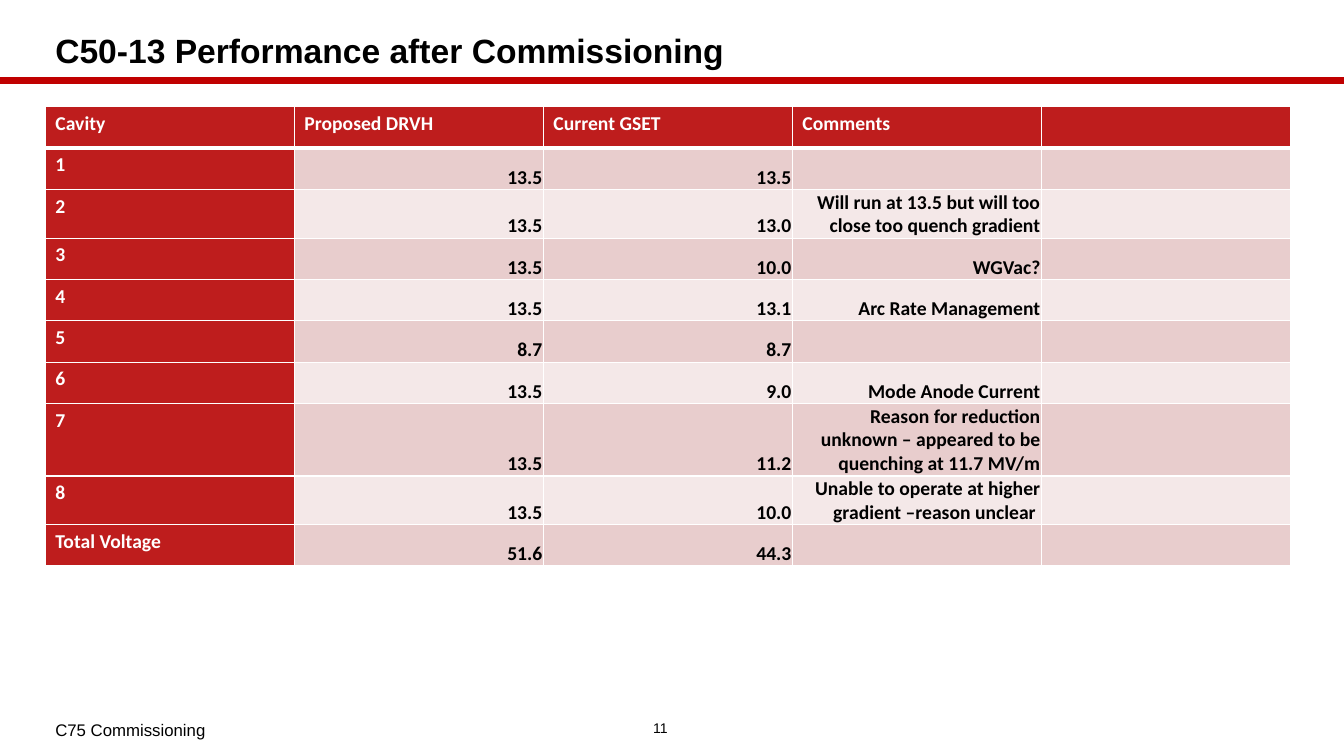
from dataclasses import dataclass

from lxml.etree import SubElement
from pptx import Presentation
from pptx.dml.color import RGBColor
from pptx.enum.shapes import MSO_CONNECTOR as Connector
from pptx.enum.text import MSO_ANCHOR as Anchor, PP_ALIGN as Align
from pptx.oxml.ns import qn
from pptx.slide import Slide
from pptx.table import _Cell as Cell
from pptx.text.text import _Paragraph as Paragraph
from pptx.util import Inches, Pt

COLORS = {
    "rule": "C00000",
    "header": "BE1D1D",
    "odd_band": "E8CDCD",
    "even_band": "F4E8E8",
    "white": "FFFFFF",
    "black": "000000",
}
COLUMN_WIDTH = 2.47
ROW_HEIGHT = 0.41
HEADINGS = ("Cavity", "Proposed DRVH", "Current GSET", "Comments", "")


@dataclass(frozen=True)
class Label:
    text: str
    left: float
    top: float
    width: float
    height: float
    size: int
    bold: bool = False
    align: Align = Align.LEFT
    line_spacing: float = 1.0


@dataclass(frozen=True)
class CavityRow:
    name: str
    proposed: str
    current: str
    comment: str = ""

    def texts(self) -> tuple[str, ...]:
        return self.name, self.proposed, self.current, self.comment, ""


LABELS = (
    Label("C50-13 Performance after Commissioning", 0.45, 0.26, 12.34, 0.53, 24,
          bold=True, line_spacing=0.9),
    Label("C75 Commissioning", 0.45, 7.07, 5.71, 0.34, 12),
    Label("11", 6.16, 7.06, 0.78, 0.33, 10, align=Align.CENTER),
)
CAVITY_ROWS = (
    CavityRow("1", "13.5", "13.5"),
    CavityRow("2", "13.5", "13.0", "Will run at 13.5 but will too close too quench gradient"),
    CavityRow("3", "13.5", "10.0", "WGVac?"),
    CavityRow("4", "13.5", "13.1", "Arc Rate Management"),
    CavityRow("5", "8.7", "8.7"),
    CavityRow("6", "13.5", "9.0", "Mode Anode Current"),
    CavityRow("7", "13.5", "11.2",
              "Reason for reduction unknown – appeared to be quenching at 11.7 MV/m"),
    CavityRow("8", "13.5", "10.0", "Unable to operate at higher gradient –reason unclear "),
    CavityRow("Total Voltage", "51.6", "44.3"),
)


def color(name: str) -> RGBColor:
    return RGBColor.from_string(COLORS[name])


def add_run(paragraph: Paragraph, text: str, font_name: str, size: int,
            bold: bool, color_name: str) -> None:
    run = paragraph.add_run()
    run.text = text
    run.font.name = font_name
    run.font.size = Pt(size)
    run.font.bold = bold
    run.font.color.rgb = color(color_name)


def draw_rule(slide: Slide) -> None:
    rule = slide.shapes.add_connector(
        Connector.STRAIGHT, Inches(-0.02), Inches(0.8), Inches(13.33), Inches(0.8))
    rule.line.color.rgb = color("rule")
    rule.line.width = Pt(4.5)
    SubElement(rule._element.spPr, qn("a:effectLst"))


def draw_label(slide: Slide, label: Label) -> None:
    shape = slide.shapes.add_textbox(
        Inches(label.left), Inches(label.top), Inches(label.width), Inches(label.height))
    frame = shape.text_frame
    frame.word_wrap = True
    frame.vertical_anchor = Anchor.MIDDLE
    paragraph = frame.paragraphs[0]
    paragraph.alignment = label.align
    paragraph.line_spacing = label.line_spacing
    add_run(paragraph, label.text, "Arial", label.size, label.bold, "black")


def set_borders(cell: Cell, top: float, bottom: float) -> None:
    properties = cell._tc.get_or_add_tcPr()
    for tag, width in (("a:lnL", 1), ("a:lnR", 1), ("a:lnT", top), ("a:lnB", bottom)):
        border = SubElement(properties, qn(tag), w=str(Pt(width)))
        fill = SubElement(border, qn("a:solidFill"))
        SubElement(fill, qn("a:srgbClr"), val=COLORS["white"])


def fill_cell(cell: Cell, text: str, row: int, column: int) -> None:
    is_heading = row == 0 or column == 0
    set_borders(cell, 3 if row == 1 else 1, 3 if row == 0 else 1)
    band = "odd_band" if row % 2 else "even_band"
    cell.fill.solid()
    cell.fill.fore_color.rgb = color("header" if is_heading else band)
    if not text:
        return
    paragraph = cell.text_frame.paragraphs[0]
    if not is_heading:
        cell.vertical_anchor = Anchor.BOTTOM
        cell.margin_left = cell.margin_top = cell.margin_right = Inches(0.01)
        cell.margin_bottom = 0
        paragraph.alignment = Align.RIGHT
    add_run(paragraph, text, "Calibri", 14, True, "white" if is_heading else "black")


def draw_table(slide: Slide) -> None:
    rows = (HEADINGS, *(cavity.texts() for cavity in CAVITY_ROWS))
    table = slide.shapes.add_table(
        len(rows), len(HEADINGS), Inches(0.45), Inches(1.06),
        Inches(COLUMN_WIDTH * len(HEADINGS)), Inches(ROW_HEIGHT * len(rows))).table
    table.first_col = True
    for column in table.columns:
        column.width = Inches(COLUMN_WIDTH)
    for row_index, texts in enumerate(rows):
        table.rows[row_index].height = Inches(ROW_HEIGHT)
        for column_index, text in enumerate(texts):
            fill_cell(table.cell(row_index, column_index), text, row_index, column_index)


def main() -> None:
    presentation = Presentation()
    presentation.slide_width = Inches(13.33)
    presentation.slide_height = Inches(7.5)
    slide = presentation.slides.add_slide(presentation.slide_layouts[6])
    draw_rule(slide)
    draw_table(slide)
    for label in LABELS:
        draw_label(slide, label)
    presentation.save("out.pptx")


if __name__ == "__main__":
    main()
